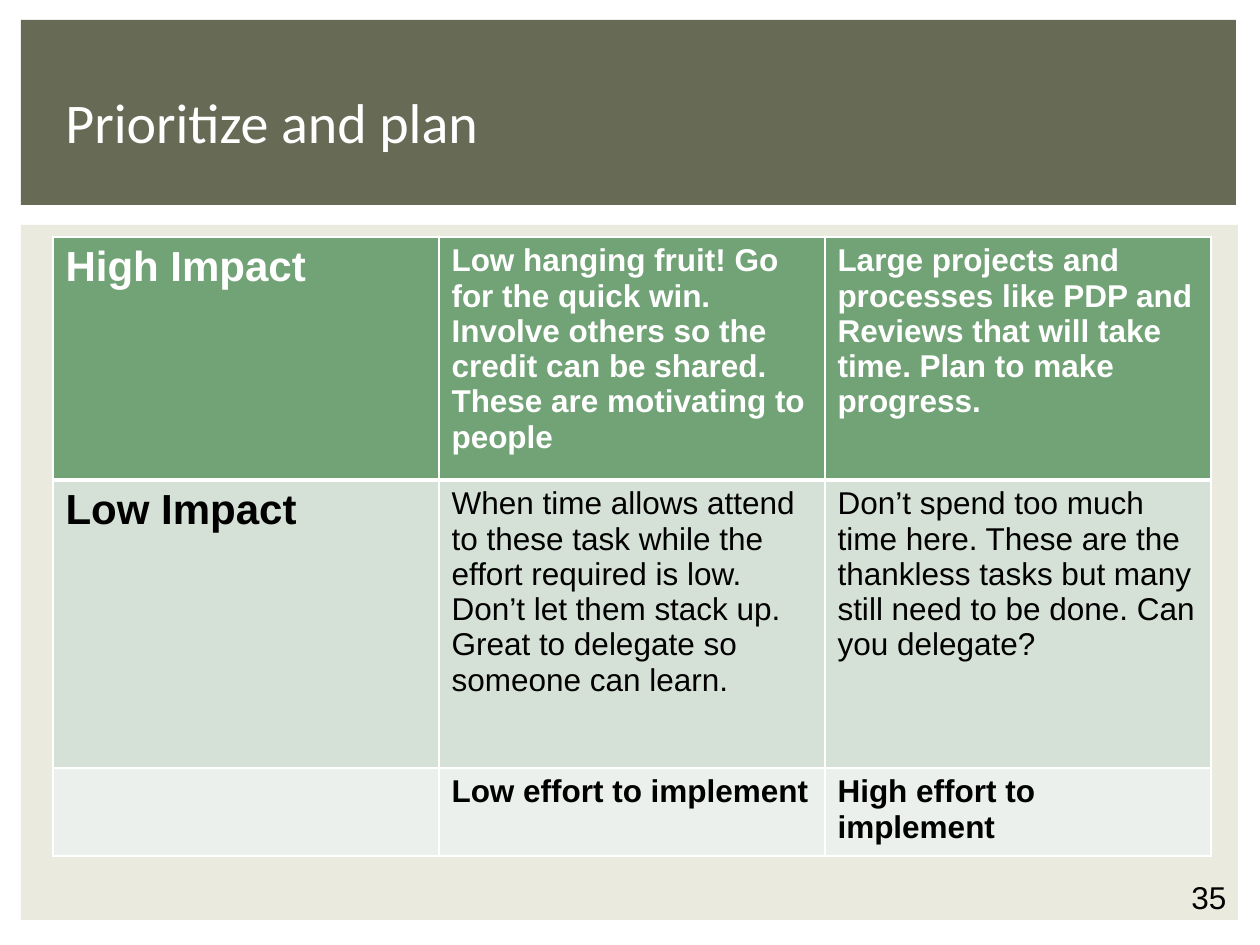
from dataclasses import dataclass

import pptx
import pptx.dml.color
import pptx.enum.shapes
import pptx.enum.text
import pptx.oxml
import pptx.oxml.ns
import pptx.util

SCALE = 914400 / 126
WHITE, BLACK = "FFFFFF", "000000"
LABEL, BODY = 24, 18


@dataclass
class Box:
    left: int
    top: int
    width: int
    height: int

    def emu(self) -> list:
        return [px(n) for n in (self.left, self.top, self.width, self.height)]


@dataclass
class Face:
    size: int
    color: str = BLACK
    bold: bool = False
    name: str = "Arial"


@dataclass
class Row:
    height: int
    fill: str
    color: str
    bold: bool
    texts: tuple
    above: int = 1
    below: int = 1


def px(n: int) -> int:
    return pptx.util.Emu(round(n * SCALE))


def rgb(code: str) -> pptx.dml.color.RGBColor:
    return pptx.dml.color.RGBColor.from_string(code)


def write(frame, text: str, face: Face) -> None:
    run = frame.paragraphs[0].add_run()
    run.text = text
    font = run.font
    font.name, font.size, font.bold = face.name, pptx.util.Pt(face.size), face.bold
    font.color.rgb = rgb(face.color)


def panel(slide, box: Box, color: str) -> None:
    shape = slide.shapes.add_shape(
        pptx.enum.shapes.MSO_SHAPE.RECTANGLE, *box.emu())
    shape.shadow.inherit = False
    shape.fill.solid()
    shape.fill.fore_color.rgb = rgb(color)
    shape.line.fill.background()


def label(slide, box: Box, text: str, face: Face, anchor) -> None:
    frame = slide.shapes.add_textbox(*box.emu()).text_frame
    frame.word_wrap = True
    frame.vertical_anchor = anchor
    write(frame, text, face)


def border(cell, side: str, points: int) -> None:
    space = pptx.oxml.ns.nsdecls("a")
    cell._tc.get_or_add_tcPr().append(pptx.oxml.parse_xml(
        f'<a:ln{side} {space} w="{pptx.util.Pt(points)}"><a:solidFill>'
        f'<a:srgbClr val="{WHITE}"/></a:solidFill></a:ln{side}>'))


def matrix(slide, box: Box, rows: list[Row]) -> None:
    count = len(rows[0].texts)
    table = slide.shapes.add_table(len(rows), count, *box.emu()).table
    table.first_row = table.horz_banding = False
    for column in table.columns:
        column.width = px(box.width // count)
    for i, row in enumerate(rows):
        table.rows[i].height = px(row.height)
        for j, text in enumerate(row.texts):
            cell = table.cell(i, j)
            sides = {"L": 1, "R": 1, "T": row.above, "B": row.below}
            for side, points in sides.items():
                border(cell, side, points)
            cell.fill.solid()
            cell.fill.fore_color.rgb = rgb(row.fill)
            if text:
                size = BODY if j else LABEL
                face = Face(size, row.color, row.bold or j == 0)
                write(cell.text_frame, text, face)


ROWS = [
    Row(243, "72A376", WHITE, True, (
        "High Impact",
        "Low hanging fruit! Go for the quick win. Involve others so the "
        "credit can be shared. These are motivating to people",
        "Large projects and processes like PDP and Reviews that will take "
        "time. Plan to make progress.",
    ), below=3),
    Row(288, "D5E0D6", BLACK, False, (
        "Low Impact",
        "When time allows attend to these task while the effort required is "
        "low. Don’t let them stack up. Great to delegate so someone can learn.",
        "Don’t spend too much time here. These are the thankless tasks but "
        "many still need to be done. Can you delegate?",
    ), above=3),
    Row(62, "EBF0EC", BLACK, True, (
        "", "Low effort to implement", "High effort to implement")),
]


def main() -> None:
    deck = pptx.Presentation()
    deck.slide_width, deck.slide_height = px(1260), px(945)
    slide = deck.slides.add_slide(deck.slide_layouts[6])
    anchor = pptx.enum.text.MSO_ANCHOR

    panel(slide, Box(21, 225, 1217, 695), "EAEBDE")
    panel(slide, Box(21, 20, 1215, 185), "676A55")
    label(slide, Box(1179, 872, 81, 38), "35", Face(BODY), anchor.TOP)
    matrix(slide, Box(53, 237, 1158, sum(row.height for row in ROWS)), ROWS)
    label(slide, Box(53, 49, 1155, 145), "Prioritize and plan",
          Face(32, WHITE, name="Calibri"), anchor.MIDDLE)

    deck.save("out.pptx")


if __name__ == "__main__":
    main()
